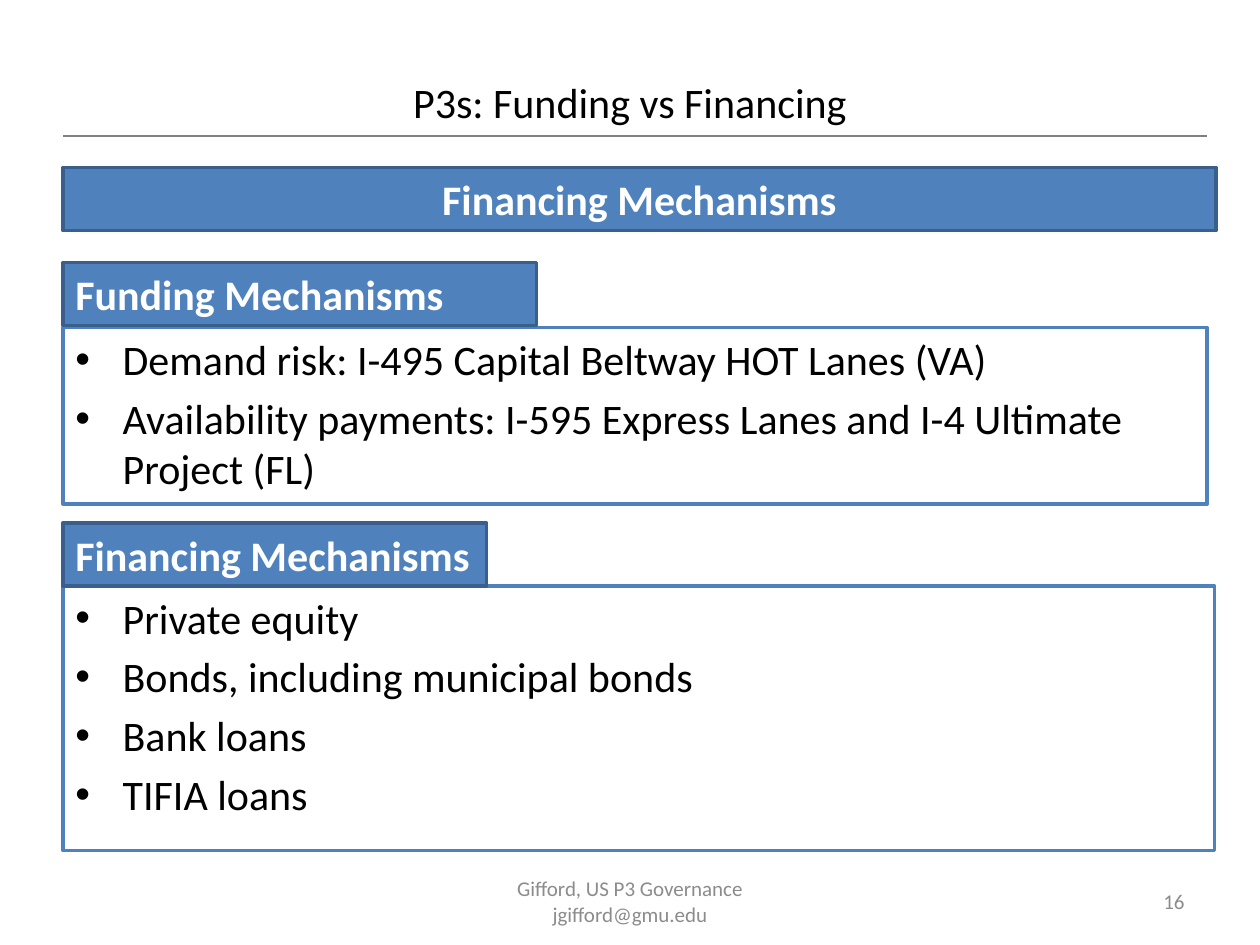
"""Build the slide on funding versus financing of P3 projects."""
from dataclasses import dataclass
from typing import Optional

import lxml.etree
import pptx
import pptx.dml.color
import pptx.enum.shapes
import pptx.enum.text
import pptx.oxml.ns
import pptx.shapes.autoshape
import pptx.slide
import pptx.util

Pt = pptx.util.Pt
Color = pptx.dml.color.RGBColor
Align = pptx.enum.text.PP_ALIGN
Anchor = pptx.enum.text.MSO_ANCHOR


@dataclass(frozen=True)
class Theme:
    font: str = "Calibri"
    bullet_font: str = "Arial"
    body_size: float = 24
    footer_size: float = 12
    bullet_indent: float = 27
    bullet_gap: float = 4.8
    outline_width: float = 2
    rule_width: float = 1.25
    black: Color = Color(0x00, 0x00, 0x00)
    white: Color = Color(0xFF, 0xFF, 0xFF)
    blue: Color = Color(0x4F, 0x81, 0xBD)
    dark_blue: Color = Color(0x3A, 0x5F, 0x8C)
    rule_gray: Color = Color(0x80, 0x80, 0x80)
    footer_gray: Color = Color(0x8C, 0x8C, 0x8C)


@dataclass(frozen=True)
class Box:
    left: float
    top: float
    width: float
    height: float


@dataclass(frozen=True)
class TextStyle:
    size: float
    color: Color
    alignment: Align = Align.LEFT
    anchor: Anchor = Anchor.TOP
    bold: bool = False
    wrap: bool = True


@dataclass(frozen=True)
class Label:
    text: str
    box: Box
    style: TextStyle


@dataclass(frozen=True)
class Panel:
    box: Box
    items: tuple[str, ...]


THEME = Theme()
LEFT = 36
HEADER_HEIGHT = 36
TITLE_STYLE = TextStyle(THEME.body_size, THEME.black, Align.CENTER, Anchor.MIDDLE)
FOOTER_STYLE = TextStyle(THEME.footer_size, THEME.footer_gray, Align.CENTER, Anchor.MIDDLE)
NUMBER_STYLE = TextStyle(THEME.footer_size, THEME.footer_gray, Align.RIGHT, Anchor.MIDDLE)
BANNER_STYLE = TextStyle(THEME.body_size, THEME.white, Align.CENTER, bold=True)
HEADER_STYLE = TextStyle(THEME.body_size, THEME.white, bold=True)
TIGHT_HEADER_STYLE = TextStyle(THEME.body_size, THEME.white, bold=True, wrap=False)
ITEM_STYLE = TextStyle(THEME.body_size, THEME.black)

TEXTS = (
    Label("P3s: Funding vs Financing", Box(LEFT, 21.6, 648, 72.7), TITLE_STYLE),
    Label("Gifford, US P3 Governance jgifford@gmu.edu", Box(246, 500.5, 228, 28.8), FOOTER_STYLE),
    Label("16", Box(516, 500.5, 168, 28.8), NUMBER_STYLE),
)
PANELS = (
    Panel(
        Box(LEFT, 187.2, 653.8, 100.8),
        (
            "Demand risk: I-495 Capital Beltway HOT Lanes (VA)",
            "Availability payments: I-595 Express Lanes and I-4 Ultimate Project (FL)",
        ),
    ),
    Panel(
        Box(LEFT, 334.8, 658.1, 151.2),
        ("Private equity", "Bonds, including municipal bonds", "Bank loans", "TIFIA loans"),
    ),
)
HEADERS = (
    Label("Financing Mechanisms", Box(LEFT, 95.8, 658.8, HEADER_HEIGHT), BANNER_STYLE),
    Label("Funding Mechanisms", Box(LEFT, 150, 270.7, HEADER_HEIGHT), HEADER_STYLE),
    Label("Financing Mechanisms", Box(LEFT, 298.8, 242, HEADER_HEIGHT), TIGHT_HEADER_STYLE),
)


def write_text(shape: pptx.shapes.autoshape.Shape, text: str, style: TextStyle) -> None:
    """Fill a shape with text in one style."""
    text_frame = shape.text_frame
    text_frame.text = text
    text_frame.word_wrap = style.wrap
    text_frame.vertical_anchor = style.anchor
    for paragraph in text_frame.paragraphs:
        paragraph.alignment = style.alignment
        for run in paragraph.runs:
            run.font.name = THEME.font
            run.font.size = Pt(style.size)
            run.font.bold = style.bold
            run.font.color.rgb = style.color


def add_bullets(shape: pptx.shapes.autoshape.Shape) -> None:
    """Give every paragraph a bullet with a hanging indent."""
    for index, paragraph in enumerate(shape.text_frame.paragraphs):
        properties = paragraph._p.get_or_add_pPr()
        properties.set("marL", str(Pt(THEME.bullet_indent)))
        properties.set("indent", str(-Pt(THEME.bullet_indent)))
        bullet_font = lxml.etree.SubElement(properties, pptx.oxml.ns.qn("a:buFont"))
        bullet_font.set("typeface", THEME.bullet_font)
        bullet = lxml.etree.SubElement(properties, pptx.oxml.ns.qn("a:buChar"))
        bullet.set("char", "•")
        if index:
            paragraph.space_before = Pt(THEME.bullet_gap)


def add_rectangle(
    slide: pptx.slide.Slide, box: Box, fill: Color, outline: Color
) -> pptx.shapes.autoshape.Shape:
    """Draw a filled and outlined rectangle."""
    shape = slide.shapes.add_shape(
        pptx.enum.shapes.MSO_SHAPE.RECTANGLE,
        Pt(box.left), Pt(box.top), Pt(box.width), Pt(box.height),
    )
    shape.shadow.inherit = False
    shape.fill.solid()
    shape.fill.fore_color.rgb = fill
    shape.line.color.rgb = outline
    shape.line.width = Pt(THEME.outline_width)
    return shape


def add_label(slide: pptx.slide.Slide, label: Label, fill: Optional[Color] = None) -> None:
    """Draw a label as plain text, or as a header when it has a fill."""
    box = label.box
    if fill is None:
        shape = slide.shapes.add_textbox(
            Pt(box.left), Pt(box.top), Pt(box.width), Pt(box.height)
        )
    else:
        shape = add_rectangle(slide, box, fill, THEME.dark_blue)
    write_text(shape, label.text, label.style)


def add_panel(slide: pptx.slide.Slide, panel: Panel) -> None:
    """Draw a white panel with a bulleted list."""
    shape = add_rectangle(slide, panel.box, THEME.white, THEME.blue)
    write_text(shape, "\n".join(panel.items), ITEM_STYLE)
    add_bullets(shape)


def add_title_rule(slide: pptx.slide.Slide) -> None:
    """Draw the line below the title."""
    rule = slide.shapes.add_connector(
        pptx.enum.shapes.MSO_CONNECTOR.STRAIGHT, Pt(LEFT), Pt(77.8), Pt(689.8), Pt(77.8)
    )
    rule.line.color.rgb = THEME.rule_gray
    rule.line.width = Pt(THEME.rule_width)
    lxml.etree.SubElement(rule._element.spPr, pptx.oxml.ns.qn("a:effectLst"))


def main() -> None:
    """Build and save the presentation."""
    presentation = pptx.Presentation()
    presentation.slide_width = Pt(720)
    presentation.slide_height = Pt(540)
    slide = presentation.slides.add_slide(presentation.slide_layouts[6])
    for label in TEXTS:
        add_label(slide, label)
    add_title_rule(slide)
    for panel in PANELS:
        add_panel(slide, panel)
    for header in HEADERS:
        add_label(slide, header, THEME.blue)
    presentation.save("out.pptx")


if __name__ == "__main__":
    main()
